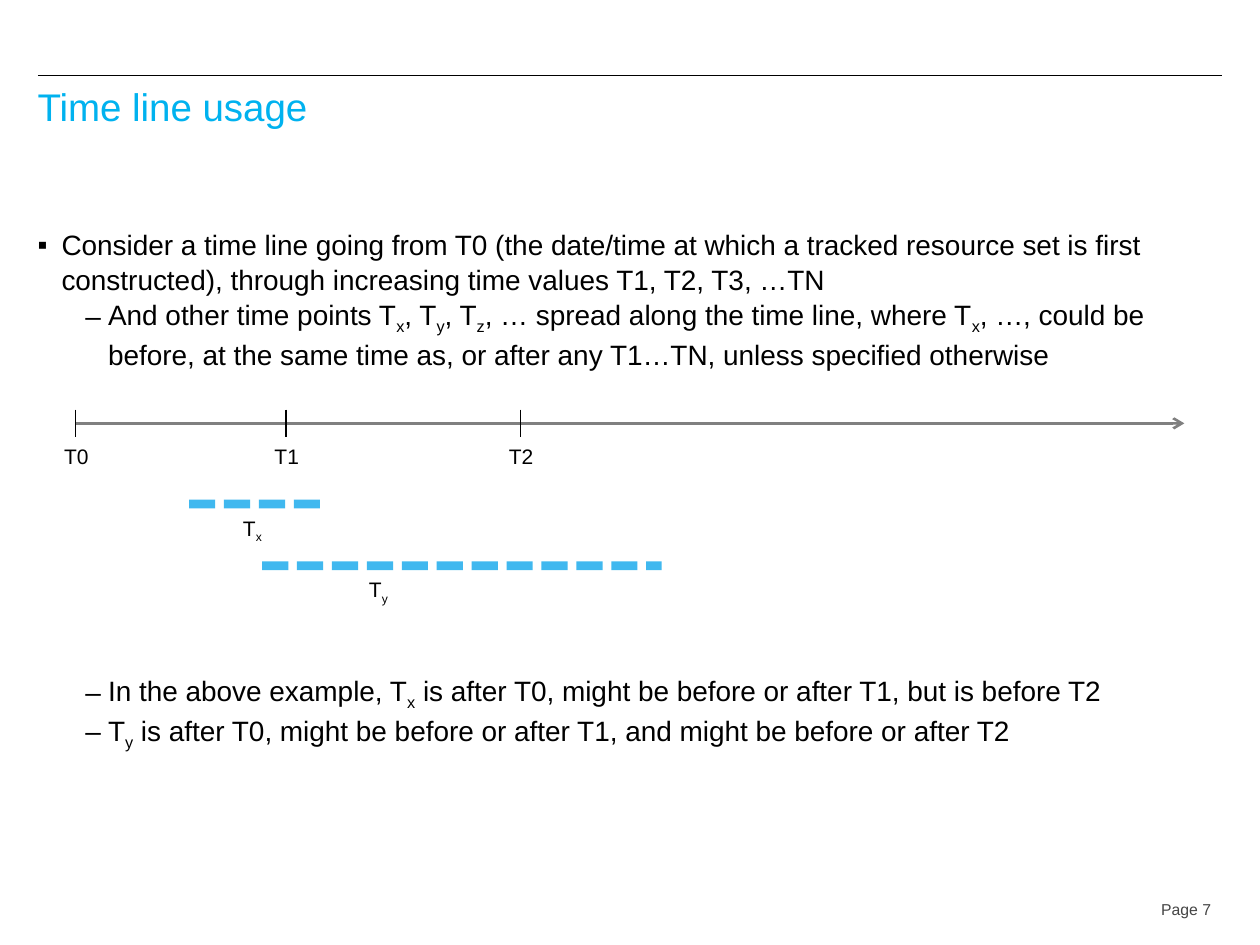
import dataclasses

import lxml.etree
import pptx
import pptx.dml.color
import pptx.enum.shapes
import pptx.enum.text
import pptx.oxml.ns
import pptx.util

Inches = pptx.util.Inches
Pt = pptx.util.Pt
qn = pptx.oxml.ns.qn
Align = pptx.enum.text.PP_ALIGN
Anchor = pptx.enum.text.MSO_ANCHOR


@dataclasses.dataclass(frozen=True)
class Theme:
    font: str = "Arial"
    ink: str = "000000"
    title: str = "00B2EF"
    page: str = "454545"
    axis: str = "808080"
    span: str = "2CB1EE"
    head: int = 22
    body: int = 16
    label: int = 12
    foot: int = 9


THEME = Theme()


def rgb(code):
    return pptx.dml.color.RGBColor.from_string(code)


def add_node(parent, tag, **attrs):
    return lxml.etree.SubElement(parent, qn(tag), attrs)


def set_all(item, values):
    for name, value in values.items():
        setattr(item, name, value)


def add_runs(para, text, size, color):
    """Write text; the letter after each underscore is a subscript."""
    first, *rest = text.split("_")
    parts = [(first, False)]
    for part in rest:
        parts += [(part[0], True), (part[1:], False)]
    for words, low in parts:
        if not words:
            continue
        run = para.add_run()
        run.text = words
        set_all(run.font, {"name": THEME.font, "size": Pt(size)})
        run.font.color.rgb = rgb(color)
        if low:
            run.font._element.set("baseline", "-25000")


def add_box(slide, x, y, w, h, **frame):
    box = slide.shapes.add_textbox(Inches(x), Inches(y), Inches(w), Inches(h))
    set_all(box.text_frame, {"word_wrap": True, **frame})
    return box.text_frame


def add_text(slide, spot, text, size, color, frame=None, form=None):
    para = add_box(slide, *spot, **(frame or {})).paragraphs[0]
    set_all(para, form or {})
    add_runs(para, text, size, color)


def add_label(slide, x, y, text):
    add_text(slide, (x, y, 0.42, 0.3), text, THEME.label, THEME.ink,
             {"word_wrap": False})


def add_line(slide, x1, y1, x2, y2, color, width):
    line = slide.shapes.add_connector(
        pptx.enum.shapes.MSO_CONNECTOR.STRAIGHT,
        Inches(x1), Inches(y1), Inches(x2), Inches(y2))
    line.line.color.rgb = rgb(color)
    line.line.width = Pt(width)
    add_node(line._element.spPr, "a:effectLst")
    return line.line._get_or_add_ln()


def add_item(para, mark, left, hang, text, form):
    props = para._p.get_or_add_pPr()
    props.set("marL", str(Inches(left)))
    props.set("indent", str(-Inches(hang)))
    ink = add_node(props, "a:buClr")
    add_node(ink, "a:srgbClr", val=THEME.ink)
    add_node(props, "a:buFont", typeface=THEME.font)
    add_node(props, "a:buChar", char=mark)
    set_all(para, {"line_spacing": 1.04, **form})
    add_runs(para, text, THEME.body, THEME.ink)


def add_list(slide):
    main_in, sub_in = ("▪", 0.19, 0.19), ("–", 0.56, 0.18)
    items = [
        (main_in, "Consider a time line going from T0 (the date/time at which "
         "a tracked resource set is first constructed), through increasing "
         "time values T1, T2, T3, …TN", {}),
        (sub_in, "And other time points T_x, T_y, T_z, … spread along the time "
         "line, where T_x, …, could be before, at the same time as, or after "
         "any T1…TN, unless specified otherwise", {}),
        # This gap leaves room for the time line
        (sub_in, "In the above example, T_x is after T0, might be before or "
         "after T1, but is before T2", {"space_before": Pt(172)}),
        (sub_in, "T_y is after T0, might be before or after T1, and might be "
         "before or after T2", {}),
    ]
    frame = add_box(slide, 0.2, 1.75, 9.5, 5)
    for num, (marks, text, form) in enumerate(items):
        para = frame.add_paragraph() if num else frame.paragraphs[0]
        add_item(para, *marks, text, form)


def add_axis(slide):
    line = add_line(slide, 0.6, 3.36, 9.4, 3.36, THEME.axis, 1.5)
    add_node(line, "a:tailEnd", type="arrow")
    for num, x in enumerate((0.6, 2.27, 4.13)):
        add_line(slide, x, 3.25, x, 3.47, THEME.ink, 0.75)
        add_label(slide, x - 0.19, 3.47, f"T{num}")


def add_span(slide, start, end, y, text_x, text):
    line = add_line(slide, start, y, end, y, THEME.span, 5)
    add_node(line.find(".//" + qn("a:srgbClr")), "a:alpha", val="90000")
    add_node(line, "a:prstDash", val="sysDash")
    add_label(slide, text_x, y + 0.04, text)


def main():
    deck = pptx.Presentation()
    set_all(deck, {"slide_width": Inches(10), "slide_height": Inches(7.5)})
    slide = deck.slides.add_slide(deck.slide_layouts[6])

    # Rule, title and page number
    add_line(slide, 0.3, 0.6, 9.7, 0.6, THEME.ink, 0.75)
    add_text(slide, (0.2, 0.65, 9.5, 0.8), "Time line usage",
             THEME.head, THEME.title, form={"line_spacing": 0.9})
    add_text(slide, (8.28, 7.07, 1.43, 0.3), "Page 7", THEME.foot, THEME.page,
             {"vertical_anchor": Anchor.MIDDLE}, {"alignment": Align.RIGHT})

    # Bullets around the time line
    add_list(slide)

    # Time line with its ticks and uncertain spans
    add_axis(slide)
    add_span(slide, 1.5, 2.58, 4, 1.83, "T_x")
    add_span(slide, 2.08, 5.25, 4.49, 2.83, "T_y")

    deck.save("out.pptx")


if __name__ == "__main__":
    main()
